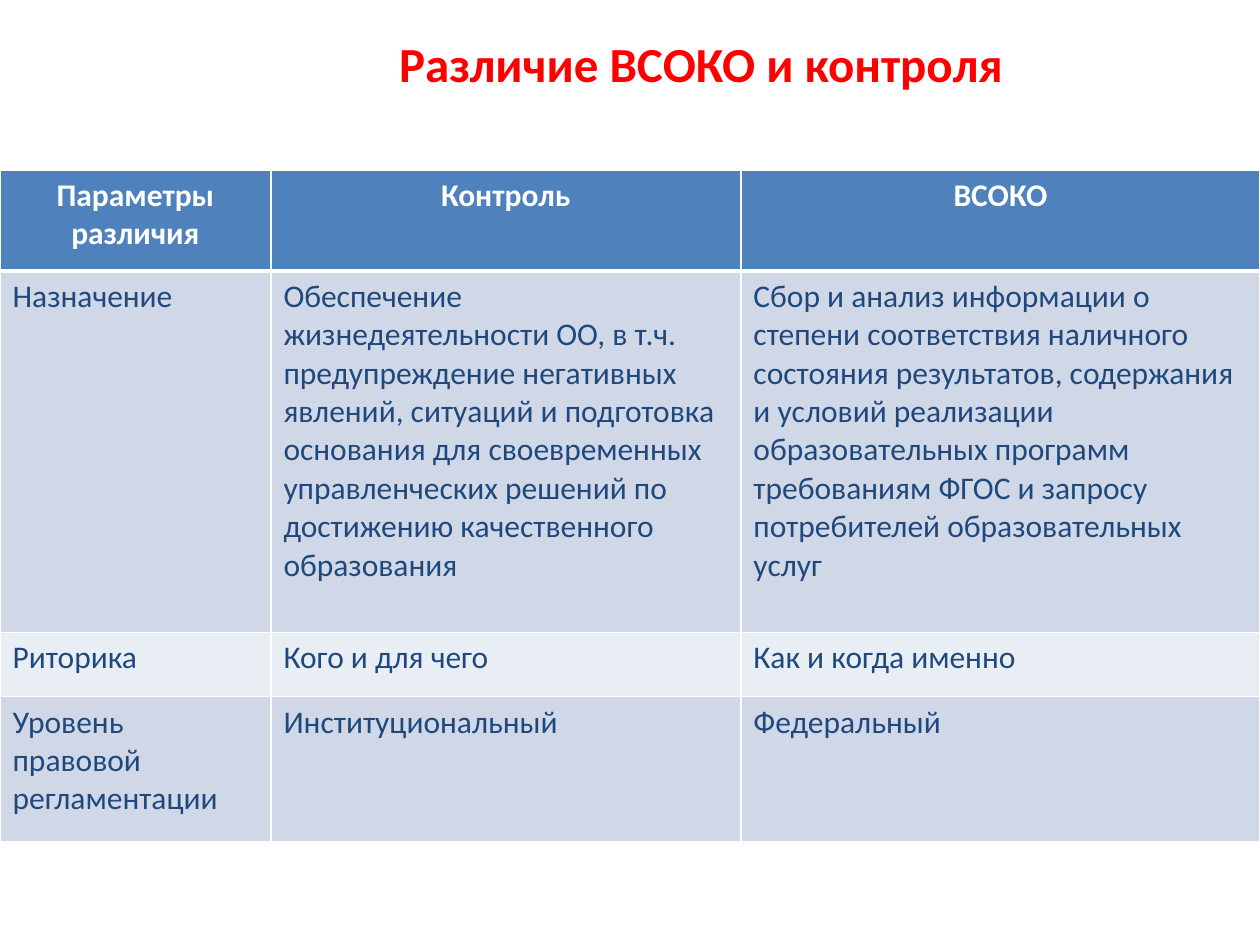
from pptx import Presentation
from pptx.dml.color import RGBColor
from pptx.enum.text import PP_ALIGN as Align
from pptx.oxml import parse_xml
from pptx.oxml.ns import nsdecls
from pptx.util import Inches, Pt

WHITE, BLUE, NAVY, RED = "FFFFFF", "4F81BD", "1F497D", "FF0000"
BANDS = ["D0D8E8", "E9EDF4"]
COLS = [2.15, 3.73, 4.12]
ROWS = [0.8, 2.87, 0.51, 1.15]
DATA = [
    ["Параметры различия", "Контроль", "ВСОКО"],
    ["Назначение\u00a0",
     "Обеспечение жизнедеятельности ОО, в т.ч. предупреждение негативных "
     "явлений, ситуаций и подготовка основания для своевременных "
     "управленческих решений по достижению качественного образования",
     "Сбор и анализ информации о степени соответствия наличного состояния "
     "результатов, содержания и условий реализации образовательных программ "
     "требованиям ФГОС и запросу потребителей образовательных услуг"],
    ["Риторика\u00a0", "Кого и для чего", "Как и когда именно"],
    ["Уровень правовой регламентации", "Институциональный\u00a0",
     "Федеральный\u00a0"],
]


def color(code):
    """Turn a hex string into a colour."""
    return RGBColor.from_string(code)


def write(frame, text, size=18, hue=NAVY, bold=False, align=Align.LEFT):
    """Put formatted text into a text frame."""
    frame.word_wrap = True
    para = frame.paragraphs[0]
    para.alignment = align
    run = para.add_run()
    run.text = text
    font = run.font
    font.name, font.size, font.bold = "Calibri", Pt(size), bold
    font.color.rgb = color(hue)


def edge(cell, side, width):
    """Draw one white border of a cell."""
    props = cell._tc.get_or_add_tcPr()
    props.append(parse_xml(
        f'<a:{side} {nsdecls("a")} w="{Pt(width)}"><a:solidFill>'
        f'<a:srgbClr val="{WHITE}"/></a:solidFill></a:{side}>'))


def paint(cell, hue, top, bottom):
    """Give a cell its borders and fill."""
    for side, width in zip(("lnL", "lnR", "lnT", "lnB"), (1, 1, top, bottom)):
        edge(cell, side, width)
    cell.fill.solid()
    cell.fill.fore_color.rgb = color(hue)


def title(slide, left, top, width, height):
    """Place the heading in the given box."""
    box = slide.shapes.add_textbox(*map(Inches, (left, top, width, height)))
    write(box.text_frame, "Различие ВСОКО и контроля",
          size=28, hue=RED, bold=True)


def grid(slide, left, top, width, height):
    """Place the comparison table in the given box."""
    table = slide.shapes.add_table(
        len(ROWS), len(COLS),
        *map(Inches, (left, top, width, height))).table
    for col, size in zip(table.columns, COLS):
        col.width = Inches(size)
    for row, size in zip(table.rows, ROWS):
        row.height = Inches(size)
    for i, line in enumerate(DATA):
        head = i == 0
        style = dict(hue=WHITE, bold=True, align=Align.CENTER) if head else {}
        fill = BLUE if head else BANDS[(i - 1) % 2]
        for j, text in enumerate(line):
            cell = table.cell(i, j)
            write(cell.text_frame, text, **style)
            paint(cell, fill, 3 if i == 1 else 1, 3 if head else 1)


def main():
    """Build and save the slide."""
    deck = Presentation()
    deck.slide_width, deck.slide_height = Inches(10), Inches(7.5)
    slide = deck.slides.add_slide(deck.slide_layouts[6])
    title(slide, 3.07, 0.22, 5.3, 0.57)
    grid(slide, 0, 1.35, sum(COLS), sum(ROWS))
    deck.save("out.pptx")


if __name__ == "__main__":
    main()
